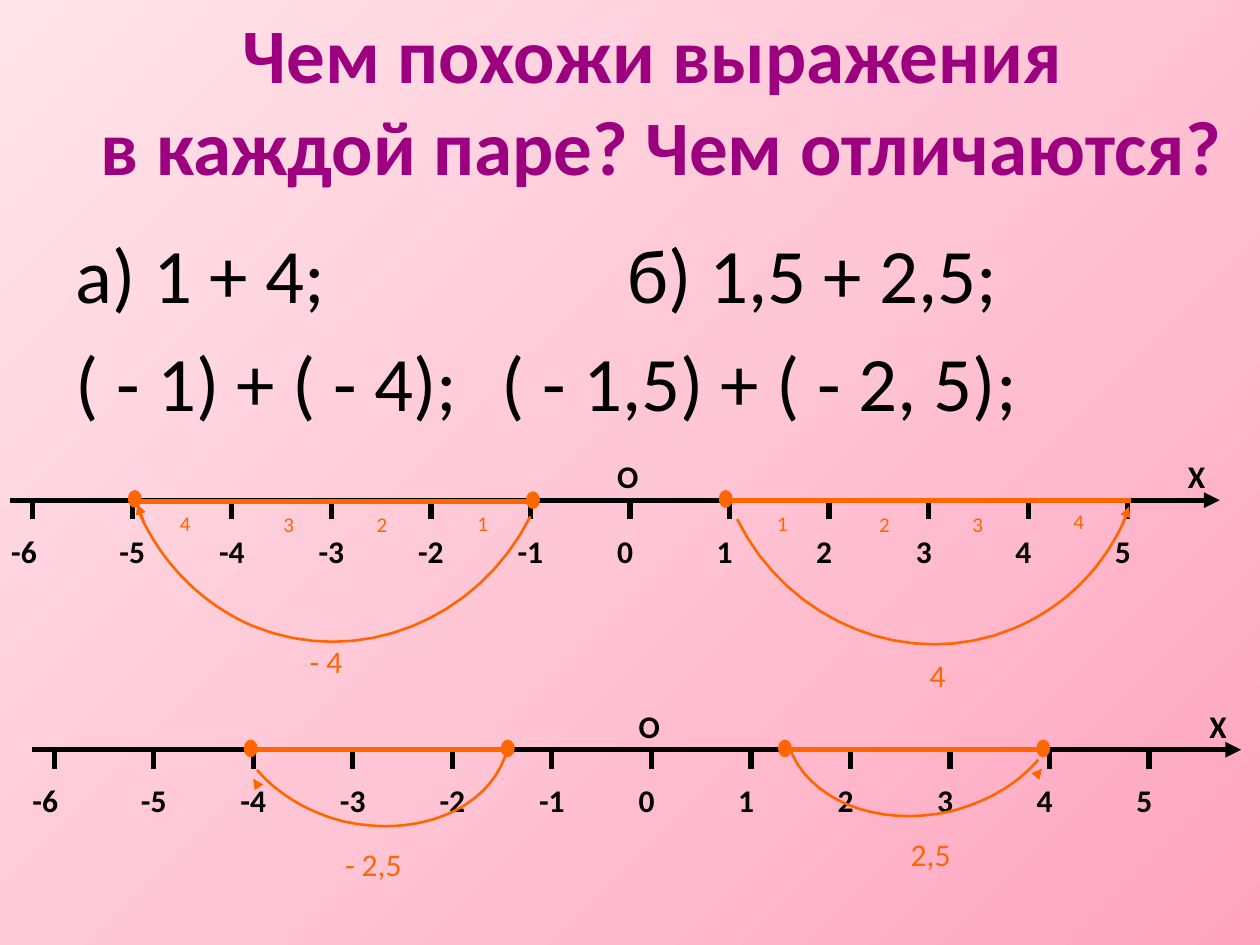
from dataclasses import dataclass

import pptx
import pptx.dml.color
import pptx.enum.shapes
import pptx.enum.text
import pptx.oxml
import pptx.oxml.ns
import pptx.oxml.xmlchemy
import pptx.util

Inches = pptx.util.Inches
Pt = pptx.util.Pt
qn = pptx.oxml.ns.qn
new_element = pptx.oxml.xmlchemy.OxmlElement
Point = tuple[float, float]

INK = "000000"
ORANGE = "FF6600"
PURPLE = "9C007F"
UNIT = 0.79
ARC_STEPS = 16


@dataclass
class NumberLine:
    zero: float
    y: float


@dataclass
class Label:
    text: str
    left: float
    top: float
    size: int = 18


@dataclass
class Jump:
    y: float
    start: float
    end: float
    dots: list[Point]
    curve: list[Point]
    arrow: tuple[Point, Point]
    labels: list[Label]


NUMBER_LINES = [NumberLine(5, 3.97), NumberLine(5.17, 5.95)]

JUMPS = [
    Jump(3.98, 1.05, 4.25, [(4.23, 3.97), (1.07, 3.96)],
         [(1.11, 4.08), (1.29, 4.48), (1.61, 4.8), (2.01, 4.97),
          (2.84, 5.31), (3.79, 4.93), (4.21, 4.1)],
         ((1.14, 4.14), (1.09, 4)),
         [Label("- 4", 2.36, 5.05), Label("1", 3.69, 4, 12), Label("2", 2.89, 4.01, 12),
          Label("3", 2.15, 4.01, 12), Label("4", 1.33, 4, 12)]),
    Jump(3.97, 5.79, 8.98, [(5.76, 3.96)],
         [(8.94, 4.09), (8.77, 4.5), (8.45, 4.82), (8.04, 4.99),
          (7.22, 5.33), (6.26, 4.95), (5.85, 4.12)],
         ((8.91, 4.16), (8.96, 4.02)),
         [Label("4", 7.28, 5.16), Label("1", 6.07, 4, 12), Label("2", 6.88, 4.01, 12),
          Label("3", 7.62, 4.01, 12), Label("4", 8.42, 3.99, 12)]),
    Jump(5.95, 2.01, 4.02, [(4.03, 5.94), (1.99, 5.94)],
         [(2.04, 6.11), (2.2, 6.3), (2.45, 6.45), (2.73, 6.52),
          (3.31, 6.65), (3.86, 6.43), (4.01, 6)],
         ((2.05, 6.24), (2.01, 6.18)),
         [Label("- 2,5", 2.64, 6.66)]),
    Jump(5.95, 6.26, 8.27, [(6.23, 5.94), (8.28, 5.94)],
         [(8.24, 6.03), (8.07, 6.23), (7.82, 6.37), (7.54, 6.44),
          (6.96, 6.57), (6.41, 6.35), (6.26, 5.92)],
         ((8.22, 6.16), (8.27, 6.1)),
         [Label("2,5", 7.13, 6.58)]),
]


def rgb(color: str) -> pptx.dml.color.RGBColor:
    return pptx.dml.color.RGBColor.from_string(color)


def write(paragraph, text: str, *, size: int = 18, color: str = INK, bold: bool = False) -> None:
    paragraph.text = text
    for run in paragraph.runs:
        run.font.name = "Calibri"
        run.font.size = Pt(size)
        run.font.bold = bold
        run.font.color.rgb = rgb(color)


def place(shape, left: float, top: float, width: float, height: float) -> None:
    shape.left, shape.top = Inches(left), Inches(top)
    shape.width, shape.height = Inches(width), Inches(height)


def add_label(slide, label: Label, **text_format) -> None:
    width = 0.1 * len(label.text) + 0.23
    height = 0.4 if label.size == 18 else 0.3
    box = slide.shapes.add_textbox(
        Inches(label.left), Inches(label.top), Inches(width), Inches(height))
    box.text_frame.word_wrap = False
    box.text_frame.auto_size = pptx.enum.text.MSO_AUTO_SIZE.SHAPE_TO_FIT_TEXT
    write(box.text_frame.paragraphs[0], label.text, size=label.size, **text_format)


def add_line(slide, start: Point, end: Point, *, color: str, width: float = 3,
             arrow: bool = False) -> None:
    line = slide.shapes.add_connector(
        pptx.enum.shapes.MSO_CONNECTOR.STRAIGHT, *map(Inches, start + end))
    line.line.color.rgb = rgb(color)
    line.line.width = Pt(width)
    properties = line._element.spPr
    if arrow:
        head = new_element("a:tailEnd")
        head.set("type", "triangle")
        properties.find(qn("a:ln")).append(head)
    properties.append(new_element("a:effectLst"))


def add_dot(slide, center: Point) -> None:
    width, height = 0.1, 0.13
    dot = slide.shapes.add_shape(
        pptx.enum.shapes.MSO_SHAPE.OVAL,
        Inches(center[0] - width / 2), Inches(center[1] - height / 2),
        Inches(width), Inches(height))
    dot.shadow.inherit = False
    dot.fill.solid()
    dot.fill.fore_color.rgb = rgb(ORANGE)
    dot.line.color.rgb = rgb(ORANGE)
    dot.line.width = Pt(0.75)


def bezier(controls: list[Point], t: float) -> Point:
    weights = ((1 - t) ** 3, 3 * t * (1 - t) ** 2, 3 * t * t * (1 - t), t ** 3)
    return (sum(w * x for w, (x, _) in zip(weights, controls)),
            sum(w * y for w, (_, y) in zip(weights, controls)))


def add_arc(slide, curve: list[Point]) -> None:
    points = [bezier(curve[first:first + 4], step / ARC_STEPS)
              for first in range(0, len(curve) - 1, 3)
              for step in range(1, ARC_STEPS + 1)]
    builder = slide.shapes.build_freeform(*map(Inches, curve[0]))
    builder.add_line_segments([(Inches(x), Inches(y)) for x, y in points], close=False)
    arc = builder.convert_to_shape()
    arc.shadow.inherit = False
    arc.fill.background()
    arc.line.color.rgb = rgb(ORANGE)
    arc.line.width = Pt(1.5)


def draw_number_line(slide, axis: NumberLine) -> None:
    add_line(slide, (axis.zero - 4.92, axis.y), (axis.zero + 4.68, axis.y),
             color=INK, arrow=True)
    for number in range(-6, 6):
        x = axis.zero + number * UNIT
        add_line(slide, (x, axis.y), (x, axis.y + 0.15), color=INK)
        shift = 0.27 if number == -6 else 0.2
        add_label(slide, Label(str(number), x - shift, axis.y + 0.2), bold=True)
    add_label(slide, Label("О", axis.zero - 0.2, axis.y - 0.39), bold=True)
    add_label(slide, Label("Х", axis.zero + 4.33, axis.y - 0.39), bold=True)


def draw_jump(slide, jump: Jump) -> None:
    add_line(slide, (jump.start, jump.y), (jump.end, jump.y), color=ORANGE)
    for center in jump.dots:
        add_dot(slide, center)
    add_arc(slide, jump.curve)
    add_line(slide, *jump.arrow, color=ORANGE, width=1.5, arrow=True)
    for label in jump.labels:
        add_label(slide, label, color=ORANGE)


def paint_background(slide) -> None:
    slide.background.fill.solid()
    solid = slide.element.find(".//" + qn("p:bgPr")).find(qn("a:solidFill"))
    stops = "".join(
        f'<a:gs pos="{position * 1000}"><a:srgbClr val="{color}"/></a:gs>'
        for position, color in ((0, "FFA4BE"), (50, "FFC7D6"), (100, "FFE4EA")))
    gradient = pptx.oxml.parse_xml(
        f'<a:gradFill {pptx.oxml.ns.nsdecls("a")} rotWithShape="1"><a:gsLst>{stops}</a:gsLst>'
        '<a:path path="circle"><a:fillToRect l="100000" t="100000"/></a:path></a:gradFill>')
    solid.getparent().replace(solid, gradient)


def write_headings(slide) -> None:
    title, body = slide.shapes.title, slide.placeholders[1]
    place(body, 0.5, 1.75, 9, 2.16)
    expressions = ["а) 1 + 4;\t\t\tб) 1,5 + 2,5;", "( - 1) + ( - 4);\t( - 1,5) + ( - 2, 5);"]
    for index, expression in enumerate(expressions):
        paragraph = body.text_frame.add_paragraph() if index else body.text_frame.paragraphs[0]
        write(paragraph, expression, size=44)
        properties = paragraph._p.get_or_add_pPr()
        properties.set("marL", str(Inches(0.38)))
        properties.set("indent", str(-Inches(0.38)))
        properties.set("defTabSz", str(Inches(1)))
        properties.append(new_element("a:buNone"))

    place(title, 0.66, 0, 9.18, 1.58)
    title.text_frame.word_wrap = False
    title.text_frame.auto_size = pptx.enum.text.MSO_AUTO_SIZE.SHAPE_TO_FIT_TEXT
    title.text_frame.vertical_anchor = pptx.enum.text.MSO_ANCHOR.TOP
    heading = title.text_frame.paragraphs[0]
    write(heading, "Чем похожи выражения \vв каждой паре? Чем отличаются?",
          size=44, color=PURPLE, bold=True)
    heading.alignment = pptx.enum.text.PP_ALIGN.CENTER


def main() -> None:
    deck = pptx.Presentation()
    deck.slide_width, deck.slide_height = Inches(10), Inches(7.5)
    slide = deck.slides.add_slide(deck.slide_layouts[1])
    paint_background(slide)
    write_headings(slide)
    for axis in NUMBER_LINES:
        draw_number_line(slide, axis)
    for jump in JUMPS:
        draw_jump(slide, jump)
    deck.save("out.pptx")


if __name__ == "__main__":
    main()
